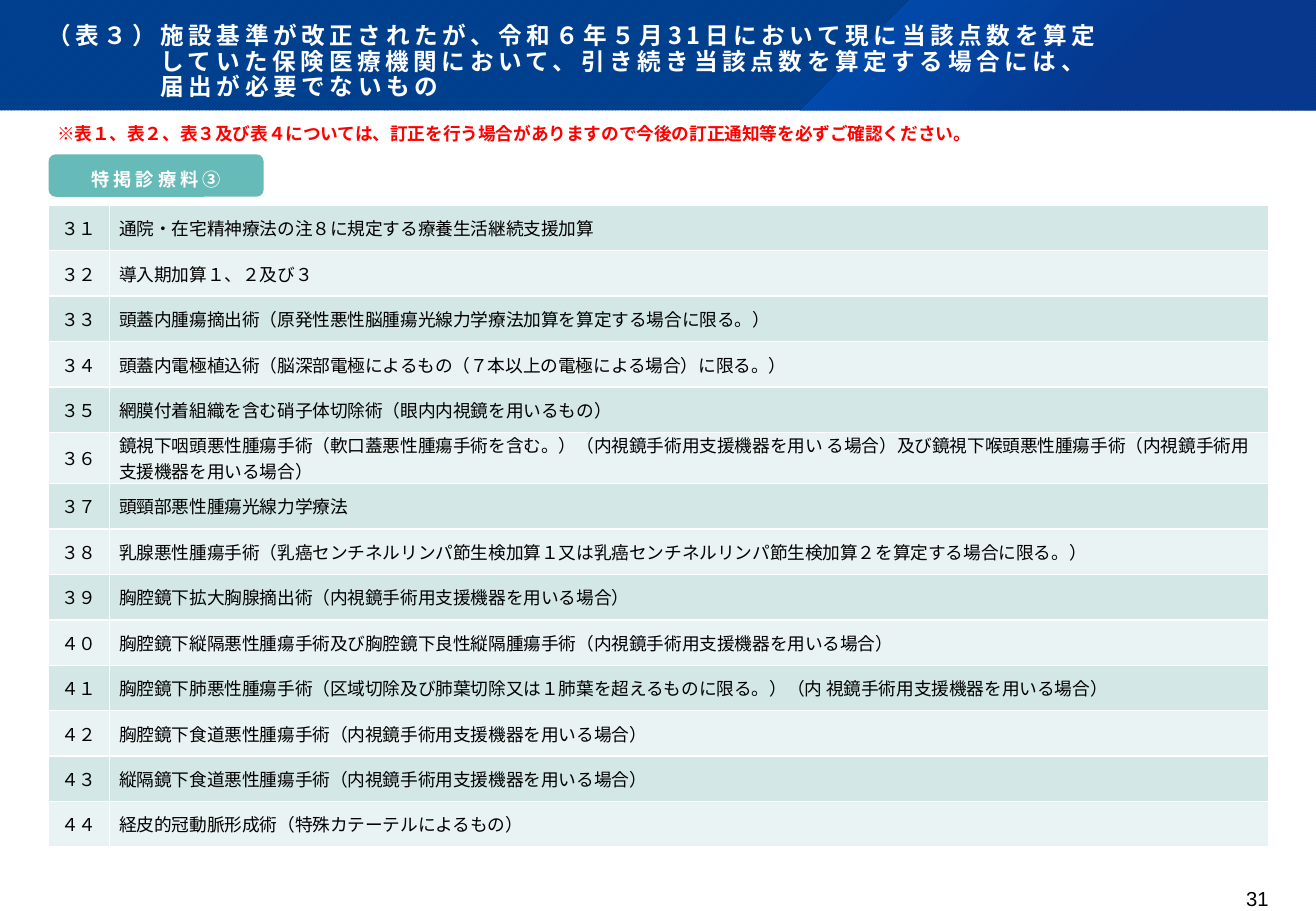
from copy import deepcopy
from pptx import Presentation
from pptx.dml.color import RGBColor
from pptx.enum.dml import MSO_PATTERN
from pptx.enum.shapes import MSO_SHAPE
from pptx.enum.text import MSO_ANCHOR, MSO_AUTO_SIZE, PP_ALIGN
from pptx.oxml import parse_xml
from pptx.oxml.ns import nsdecls, qn
from pptx.util import Inches, Pt

LEFT, RIGHT = PP_ALIGN.LEFT, PP_ALIGN.RIGHT
CENTER, JUSTIFY = PP_ALIGN.CENTER, PP_ALIGN.JUSTIFY
TOP, MIDDLE, BOTTOM = MSO_ANCHOR.TOP, MSO_ANCHOR.MIDDLE, MSO_ANCHOR.BOTTOM
FIXED = MSO_AUTO_SIZE.NONE
RECT, ROUND = MSO_SHAPE.RECTANGLE, MSO_SHAPE.ROUNDED_RECTANGLE
STRIPE = MSO_PATTERN.DARK_UPWARD_DIAGONAL

WHITE = RGBColor(0xFF, 0xFF, 0xFF)
BLACK = RGBColor(0, 0, 0)
RED = RGBColor(0xFF, 0, 0)
NAVY = RGBColor(0x00, 0x35, 0x79)
BLUE = RGBColor(0x00, 0x42, 0x92)
BRIGHT = RGBColor(0x00, 0x64, 0xDF)
DEEP = RGBColor(0x0C, 0x33, 0x8E)
TEAL = RGBColor(0x66, 0xBA, 0xB7)
BANDS = (RGBColor(0xD3, 0xE7, 0xE6), RGBColor(0xEA, 0xF3, 0xF3))
NOTO, KARLA, ARIAL = "Noto Sans CJK JP", "Karla", "Arial"

TITLE = [
    ("（表３）施設基準が改正されたが、令和６年５月", KARLA),
    ("31", NOTO),
    ("日において現に当該点数を算定\n"
     "していた保険医療機関において、引き続き当該点数を算定する場合には、\n"
     "届出が必要でないもの", KARLA),
]
NOTE = "※表１、表２、表３及び表４については、訂正を行う場合がありますので今後の訂正通知等を必ずご確認ください。"
LABEL = "特掲診療料③"
PAGE = "31"
ITEMS = [
    ("３１", "通院・在宅精神療法の注８に規定する療養生活継続支援加算"),
    ("３２", "導入期加算１、２及び３"),
    ("３３", "頭蓋内腫瘍摘出術（原発性悪性脳腫瘍光線力学療法加算を算定する場合に限る。）"),
    ("３４", "頭蓋内電極植込術（脳深部電極によるもの（７本以上の電極による場合）に限る。）"),
    ("３５", "網膜付着組織を含む硝子体切除術（眼内内視鏡を用いるもの）"),
    ("３６", "鏡視下咽頭悪性腫瘍手術（軟口蓋悪性腫瘍手術を含む。）（内視鏡手術用支援機器を用い る場合）"
             "及び鏡視下喉頭悪性腫瘍手術（内視鏡手術用支援機器を用いる場合）"),
    ("３７", "頭頸部悪性腫瘍光線力学療法"),
    ("３８", "乳腺悪性腫瘍手術（乳癌センチネルリンパ節生検加算１又は乳癌センチネルリンパ節生検加算２を算定する場合に限る。）"),
    ("３９", "胸腔鏡下拡大胸腺摘出術（内視鏡手術用支援機器を用いる場合）"),
    ("４０", "胸腔鏡下縦隔悪性腫瘍手術及び胸腔鏡下良性縦隔腫瘍手術（内視鏡手術用支援機器を用いる場合）"),
    ("４１", "胸腔鏡下肺悪性腫瘍手術（区域切除及び肺葉切除又は１肺葉を超えるものに限る。）（内 視鏡手術用支援機器を用いる場合）"),
    ("４２", "胸腔鏡下食道悪性腫瘍手術（内視鏡手術用支援機器を用いる場合）"),
    ("４３", "縦隔鏡下食道悪性腫瘍手術（内視鏡手術用支援機器を用いる場合）"),
    ("４４", "経皮的冠動脈形成術（特殊カテーテルによるもの）"),
]
WIDTH, BAND = 10.83, 0.91
COLS = (0.5, 9.54)
TABLE = (0.4, 1.69, sum(COLS), 5.24)


def box(*nums):
    return [Inches(n) for n in nums]


def write(frame, text, font=NOTO, size=10.5, color=BLACK, bold=False, align=LEFT,
          gap=0, line=None, after=0, hang=0):
    para = frame.paragraphs[0]
    para.alignment, para.line_spacing, para.space_after = align, line, Pt(after)
    if hang:
        props = para._p.get_or_add_pPr()
        props.set("marL", str(Inches(hang)))
        props.set("indent", str(-Inches(hang)))
    for part, face in [(text, font)] if isinstance(text, str) else text:
        for i, piece in enumerate(part.split("\n")):
            if i:
                para.add_line_break()
                para._p[-1].append(deepcopy(look))
            run = para.add_run()
            run.text = piece
            run.font.name, run.font.size, run.font.bold = face, Pt(size), bold
            run.font.color.rgb = color
            look = run._r.get_or_add_rPr()
            look.set("lang", "ja-JP")
            if gap:
                look.set("spc", str(round(gap * 100)))
            east = ARIAL if face == ARIAL else NOTO
            look.find(qn("a:latin")).addnext(
                parse_xml(f'<a:ea {nsdecls("a")} typeface="{east}"/>'))


def setup(frame, pads, anchor=TOP):
    frame.auto_size, frame.word_wrap, frame.vertical_anchor = FIXED, True, anchor
    (frame.margin_left, frame.margin_top,
     frame.margin_right, frame.margin_bottom) = box(*pads)
    return frame


def plain(shape):
    shape.shadow.inherit = False
    shape.line.fill.background()
    return shape


def label(slide, place, pads):
    return setup(slide.shapes.add_textbox(*box(*place)).text_frame, pads)


def header(slide):
    band = plain(slide.shapes.add_shape(RECT, *box(0, 0, WIDTH, BAND)))
    band.fill.patterned()
    band.fill.pattern = STRIPE
    band.fill.fore_color.rgb, band.fill.back_color.rgb = NAVY, BLUE

    path = slide.shapes.build_freeform(*box(7.49, 0))
    path.add_line_segments([box(*p) for p in ((WIDTH, 0), (WIDTH, BAND), (6.58, BAND))])
    sheen = plain(path.convert_to_shape())
    sheen.fill.gradient()
    stops = "".join(
        f'<a:gs pos="{pos}000"><a:srgbClr val="{tone}"><a:alpha val="{alpha}000"/></a:srgbClr></a:gs>'
        for pos, tone, alpha in ((0, BRIGHT, 50), (62, DEEP, 55)))
    props = sheen._element.spPr
    props.replace(props.find(qn("a:gradFill")), parse_xml(
        f'<a:gradFill {nsdecls("a")}><a:gsLst>{stops}</a:gsLst><a:path path="circle">'
        '<a:fillToRect r="100000" b="100000"/></a:path></a:gradFill>'))

    title = slide.shapes.title
    title.left, title.top, title.width, title.height = box(0, 0, WIDTH, BAND)
    slide.shapes._spTree.append(title._element)
    write(setup(title.text_frame, (0.39, 0.36, 0.36, 0.08), BOTTOM), TITLE,
          size=14, color=WHITE, bold=True, gap=2.7, line=0.9, hang=0.93)


def grid(slide):
    table = slide.shapes.add_table(len(ITEMS), len(COLS), *box(*TABLE)).table
    table.first_row = table.horz_banding = False
    for col, wide in zip(table.columns, COLS):
        col.width = Inches(wide)
    for r, item in enumerate(ITEMS):
        table.rows[r].height = Inches(TABLE[3] / len(ITEMS))
        for c, text in enumerate(item):
            cell = table.cell(r, c)
            cell.margin_left = cell.margin_right = Inches(0.08)
            cell.margin_top = cell.margin_bottom = 0
            cell.vertical_anchor = MIDDLE
            cell.fill.solid()
            cell.fill.fore_color.rgb = BANDS[r % 2]
            for i, side in enumerate(("lnL", "lnR", "lnT", "lnB")):
                cell._tc.tcPr.insert(i, parse_xml(
                    f'<a:{side} {nsdecls("a")} w="{Pt(1)}"><a:solidFill>'
                    f'<a:srgbClr val="{WHITE}"/></a:solidFill></a:{side}>'))
            write(cell.text_frame, text, font=(NOTO, KARLA)[c], align=(CENTER, LEFT)[c])


def main():
    deck = Presentation()
    deck.slide_width, deck.slide_height = box(WIDTH, 7.5)
    slide = deck.slides.add_slide(deck.slide_layouts[5])
    header(slide)

    write(label(slide, (9.75, 7.3, 0.69, 0.3), (0, 0, 0, 0)), PAGE,
          font=ARIAL, size=12, align=RIGHT)

    pill = plain(slide.shapes.add_shape(ROUND, *box(0.4, 1.27, 1.77, 0.35)))
    pill.adjustments[0] = 0.17
    pill.fill.solid()
    pill.fill.fore_color.rgb = TEAL
    write(setup(pill.text_frame, (0.1, 0.05, 0.1, 0.05), MIDDLE), LABEL,
          size=10.8, color=WHITE, bold=True, align=CENTER, gap=2.4, line=1.3, after=8)

    grid(slide)
    write(label(slide, (0.41, 0.98, 7.8, 0.24), (0.06, 0.03, 0.06, 0.03)), NOTE,
          color=RED, bold=True, align=JUSTIFY, after=4)
    deck.save("out.pptx")


if __name__ == "__main__":
    main()
